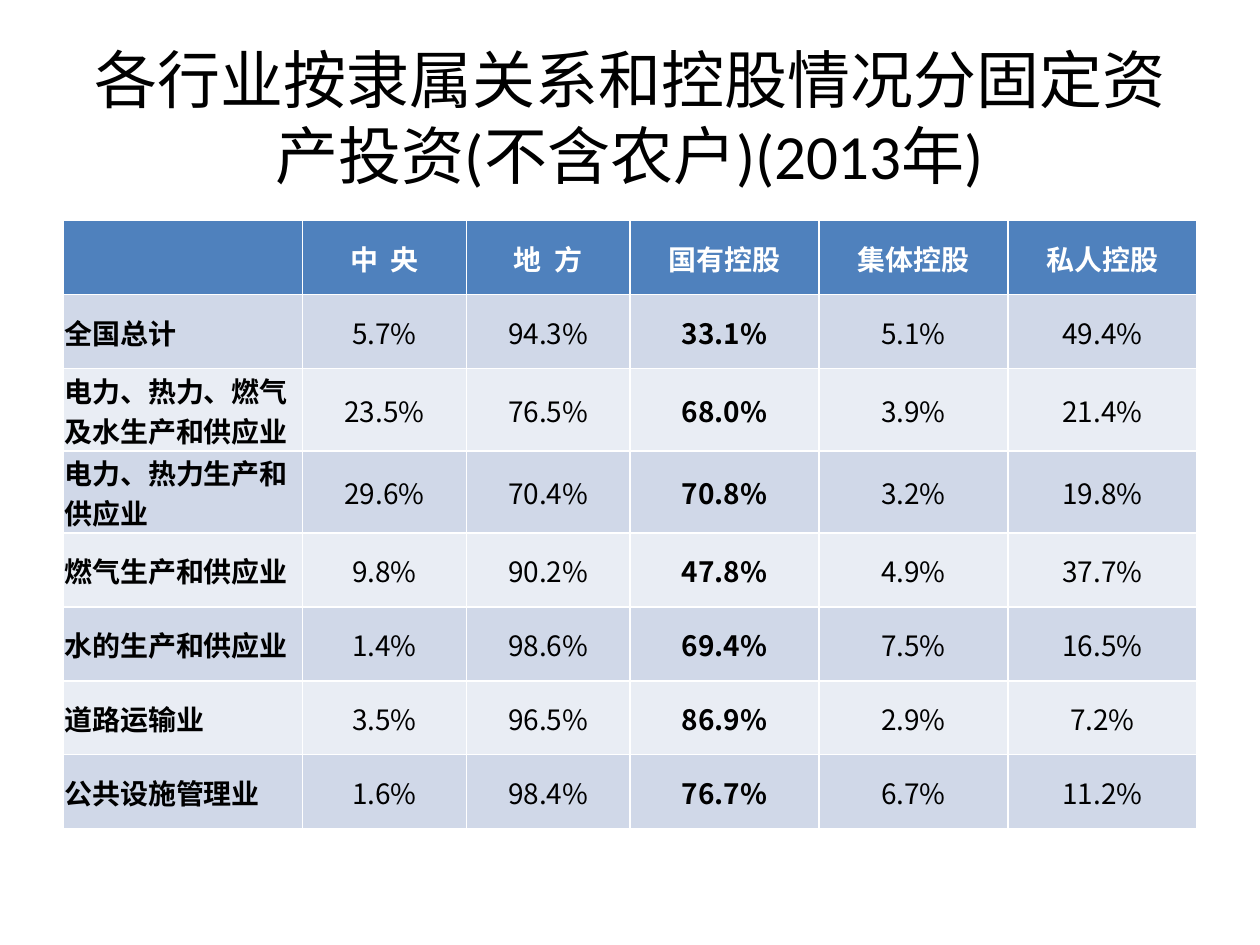
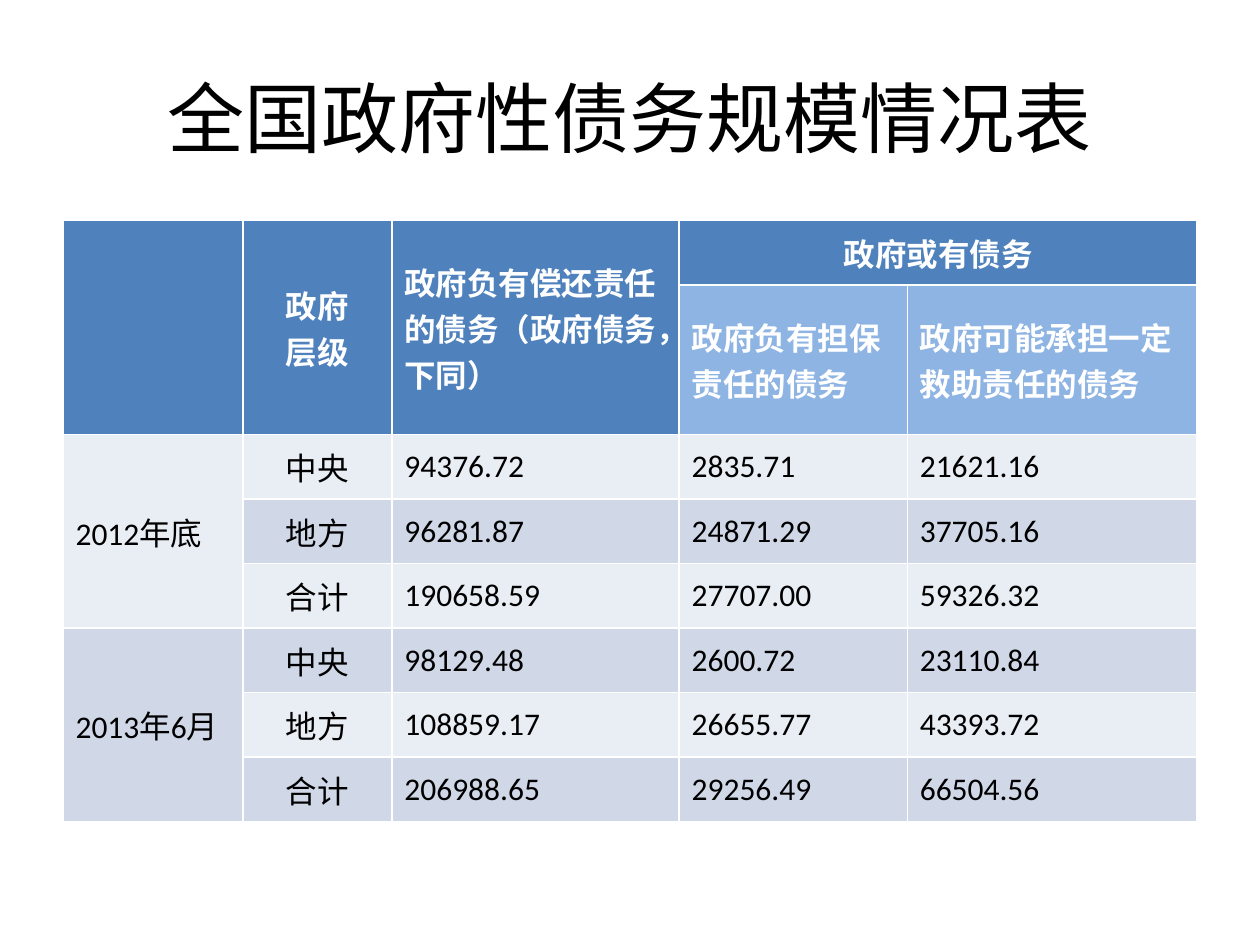
from pptx import Presentation
from pptx.dml.color import RGBColor
from pptx.enum.text import MSO_ANCHOR, MSO_AUTO_SIZE, PP_ALIGN
from pptx.util import Cm, Pt

LEFT, CENTER = PP_ALIGN.LEFT, PP_ALIGN.CENTER
MIDDLE = MSO_ANCHOR.MIDDLE
NO_AUTOFIT = MSO_AUTO_SIZE.NONE

# Shared look
BLACK, WHITE = "000000", "FFFFFF"
HEADER_FILL, SUBHEADER_FILL = "4F81BD", "8EB4E3"
BAND_FILLS = ("E9EDF4", "D0D8E8")  # even and odd table rows
TITLE_FONT, PERCENT_FONT = "Calibri", "Noto Sans CJK SC"
LEFT_EDGE, CONTENT_WIDTH = 1.27, 22.86
TITLE_TOP, TITLE_HEIGHT, TABLE_TOP = 0.76, 3.18, 4.45
TITLE_ONLY = 5

# Investment shares by industry
INVESTMENT_ROWS = [
    ("", "中  央", "地  方", "国有控股", "集体控股", "私人控股"),
    ("全国总计", "5.7%", "94.3%", "33.1%", "5.1%", "49.4%"),
    ("电力、热力、燃气及水生产和供应业", "23.5%", "76.5%", "68.0%", "3.9%", "21.4%"),
    ("电力、热力生产和供应业", "29.6%", "70.4%", "70.8%", "3.2%", "19.8%"),
    ("燃气生产和供应业", "9.8%", "90.2%", "47.8%", "4.9%", "37.7%"),
    ("水的生产和供应业", "1.4%", "98.6%", "69.4%", "7.5%", "16.5%"),
    ("道路运输业", "3.5%", "96.5%", "86.9%", "2.9%", "7.2%"),
    ("公共设施管理业", "1.6%", "98.4%", "76.7%", "6.7%", "11.2%"),
]
INVESTMENT_WIDTHS = [4.83, 3.3, 3.3, 3.81, 3.81, 3.81]
INDUSTRY_COL, STATE_HELD_COL = 0, 3
TIGHT_MARGINS = {"margin_left": Cm(0.03), "margin_right": Cm(0.03),
                 "margin_top": Cm(0.03), "margin_bottom": 0}

# Government debt by period and level
DEBT_ROWS = [
    ("", "政府\n层级", "政府负有偿还责任的债务（政府债务，下同）", "政府或有债务", ""),
    ("", "", "", "政府负有担保责任的债务", "政府可能承担一定救助责任的债务"),
    ("2012年底", "中央", "94376.72", "2835.71", "21621.16"),
    ("", "地方", "96281.87", "24871.29", "37705.16"),
    ("", "合计", "190658.59", "27707.00", "59326.32"),
    ("2013年6月", "中央", "98129.48", "2600.72", "23110.84"),
    ("", "地方", "108859.17", "26655.77", "43393.72"),
    ("", "合计", "206988.65", "29256.49", "66504.56"),
]
DEBT_WIDTHS = [3.63, 3, 5.79, 4.6, 5.84]
DEBT_HEIGHTS = [1.3, 2.24] + [1.3] * 6
DEBT_HEADER_ROWS = 2
LEVEL_COL, CONTINGENT_COL = 1, 3
# Corner pairs: (top row, left column), (bottom row, right column)
DEBT_MERGES = [((0, col), (1, col)) for col in range(CONTINGENT_COL)] + [
    ((0, CONTINGENT_COL), (0, CONTINGENT_COL + 1)),
    ((2, 0), (4, 0)),
    ((5, 0), (7, 0)),
]


def rgb(hex_color):
    return RGBColor.from_string(hex_color)


def set_attributes(target, values):
    for name, value in values.items():
        setattr(target, name, value)


def format_font(font, color, **values):
    set_attributes(font, values)
    font.color.rgb = rgb(color)


def add_titled_slide(prs, heading, size):
    slide = prs.slides.add_slide(prs.slide_layouts[TITLE_ONLY])
    title = slide.shapes.title
    set_attributes(title, {"left": Cm(LEFT_EDGE), "top": Cm(TITLE_TOP),
                           "width": Cm(CONTENT_WIDTH), "height": Cm(TITLE_HEIGHT)})
    frame = title.text_frame
    frame.text = heading
    set_attributes(frame, {"auto_size": NO_AUTOFIT, "word_wrap": True,
                           "vertical_anchor": MIDDLE})
    paragraph = frame.paragraphs[0]
    paragraph.alignment = CENTER
    format_font(paragraph.runs[0].font, BLACK, name=TITLE_FONT, size=Pt(size))
    return slide


def add_grid(slide, rows, widths, heights):
    """Add a table whose white rules come from its default style."""
    grid = slide.shapes.add_table(
        len(rows), len(widths), Cm(LEFT_EDGE), Cm(TABLE_TOP),
        Cm(CONTENT_WIDTH), Cm(sum(heights))).table
    for column, width in zip(grid.columns, widths):
        column.width = Cm(width)
    for row, height in zip(grid.rows, heights):
        row.height = Cm(height)
    return grid


def fill_cell(cell, text, fill, alignment, color, margins=None, **font_values):
    cell.text = text
    set_attributes(cell, {"vertical_anchor": MIDDLE, **(margins or {})})
    cell.fill.solid()
    cell.fill.fore_color.rgb = rgb(fill)
    for paragraph in cell.text_frame.paragraphs:
        paragraph.alignment = alignment
        format_font(paragraph.font, color, **font_values)
        for run in paragraph.runs:
            format_font(run.font, color, **font_values)


def add_investment_table(slide):
    grid = add_grid(slide, INVESTMENT_ROWS, INVESTMENT_WIDTHS,
                    [1.49] * len(INVESTMENT_ROWS))
    for r, row in enumerate(INVESTMENT_ROWS):
        is_header = r == 0
        for c, text in enumerate(row):
            fill_cell(
                grid.cell(r, c), text,
                HEADER_FILL if is_header else BAND_FILLS[r % 2],
                LEFT if c == INDUSTRY_COL else CENTER,
                WHITE if is_header else BLACK,
                TIGHT_MARGINS, name=PERCENT_FONT, size=Pt(16),
                bold=is_header or c in (INDUSTRY_COL, STATE_HELD_COL))


def debt_fill(r, c):
    if r >= DEBT_HEADER_ROWS:
        return BAND_FILLS[r % 2]
    return SUBHEADER_FILL if r == 1 and c >= CONTINGENT_COL else HEADER_FILL


def add_debt_table(slide):
    grid = add_grid(slide, DEBT_ROWS, DEBT_WIDTHS, DEBT_HEIGHTS)
    for r, row in enumerate(DEBT_ROWS):
        is_header = r < DEBT_HEADER_ROWS
        for c, text in enumerate(row):
            centered = c == LEVEL_COL or (r, c) == (0, CONTINGENT_COL)
            fill_cell(grid.cell(r, c), text, debt_fill(r, c),
                      CENTER if centered else LEFT,
                      WHITE if is_header else BLACK,
                      name=TITLE_FONT, size=Pt(18), bold=is_header)
    for first, last in DEBT_MERGES:
        grid.cell(*first).merge(grid.cell(*last))


def main():
    prs = Presentation()
    prs.slide_width, prs.slide_height = Cm(25.4), Cm(19.05)

    add_investment_table(add_titled_slide(
        prs, "各行业按隶属关系和控股情况分固定资产投资(不含农户)(2013年)", 36))
    add_debt_table(add_titled_slide(prs, "全国政府性债务规模情况表", 44))

    prs.save("out.pptx")


if __name__ == "__main__":
    main()
